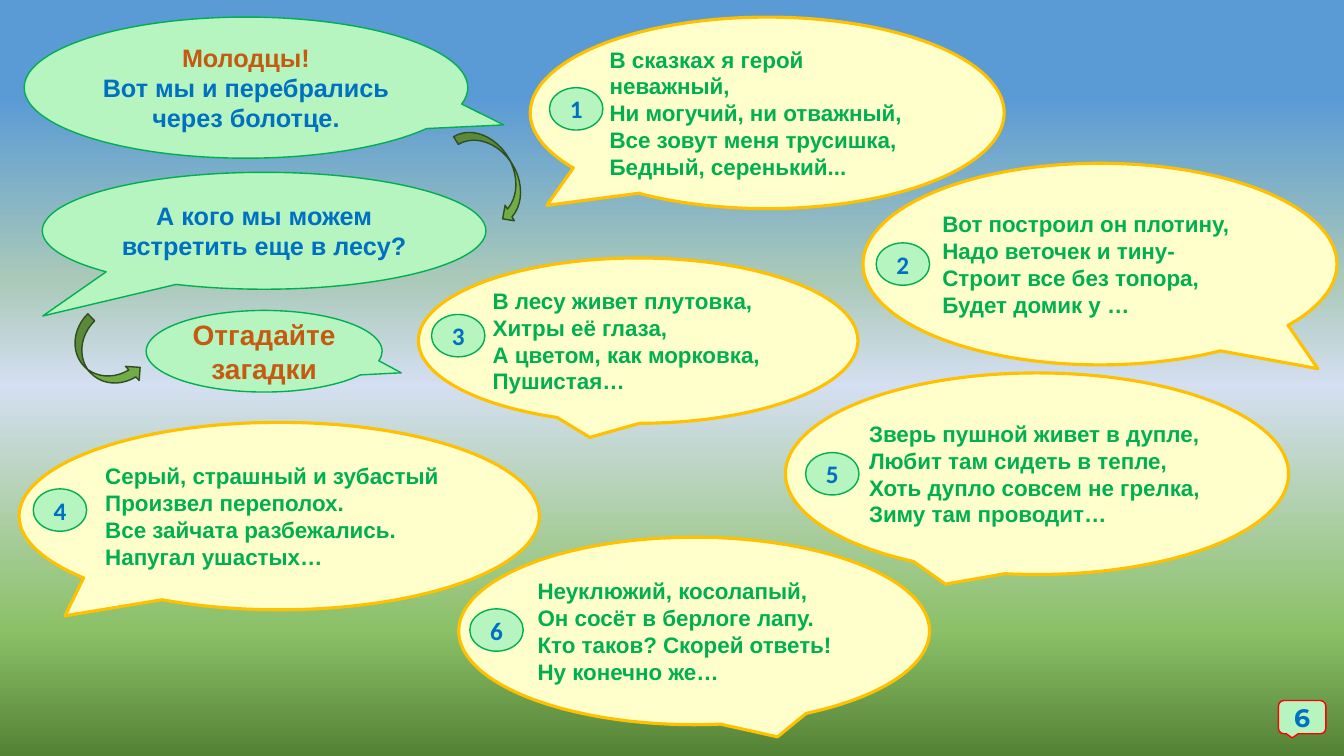
from lxml import etree
from pptx import Presentation
from pptx.dml.color import RGBColor
from pptx.enum import shapes, text
from pptx.oxml.ns import qn
from pptx.util import Inches, Pt

HUES = {
    "mint": "B6F4C0", "green": "00B050", "cream": "FFFFCC", "gold": "FFC000",
    "blue": "0070C0", "rust": "C55A11", "leaf": "70AD47", "moss": "314C1F",
    "red": "FF0000",
}
SKY = [(13, "5B9BD5"), (37, "AAC9B9"), (51, "D4DFF1"), (83, "8CC168"), (100, "548235")]
FORM = shapes.MSO_SHAPE
ALIGN = text.PP_ALIGN

HINTS = [
    ((0.24, 0.17, 4.4, 1.4), (0.581, 0.264), 18,
     [("Молодцы!", "rust"), ("Вот мы и перебрались через болотце.", "blue")]),
    ((0.42, 1.71, 4.4, 1.16), (-0.499, 0.729), 18,
     [("А кого мы можем встретить еще в лесу?", "blue")]),
    ((1.45, 3.08, 2.34, 0.81), (0.581, 0.264), 20,
     [("Отгадайте загадки", "rust")]),
]
RIDDLES = [
    ((5.26, 0.17, 4.7, 1.9), (-0.465, 0.483), (5.45, 0.87),
     ["В сказках я герой неважный,", "Ни могучий, ни отважный,",
      "Все зовут меня трусишка,", "Бедный, серенький..."]),
    ((8.56, 1.62, 4.7, 2), (0.46, 0.519), (8.69, 2.41),
     ["Вот построил он плотину,", "Надо веточек и тину-",
      "Строит все без топора,", "Будет домик у …"]),
    ((4.15, 2.56, 4.36, 1.64), (-0.11, 0.585), (4.28, 3.12),
     ["В лесу живет плутовка,", "Хитры её глаза,",
      "А цветом, как морковка,", "Пушистая…"]),
    ((0.19, 4.19, 5.16, 1.86), (-0.412, 0.532), (0.33, 4.85),
     ["Серый, страшный и зубастый", "Произвел переполох.",
      "Все зайчата разбежались.", "Напугал ушастых…"]),
    ((7.79, 3.7, 4.99, 2), (-0.182, 0.548), (7.99, 4.49),
     ["Зверь пушной живет в дупле,", "Любит там сидеть в тепле,",
      "Хоть дупло совсем не грелка,", "Зиму там проводит…"]),
    ((4.55, 5.33, 4.67, 1.86), (0.177, 0.565), (4.66, 6.04),
     ["Неуклюжий, косолапый,", "Он сосёт в берлоге лапу.",
      "Кто таков? Скорей ответь!", "Ну конечно же…"]),
]


def tint(name):
    return RGBColor.from_string(HUES[name])


def paint_sky(slide):
    fill = slide.background.fill
    fill.gradient()
    fill.gradient_angle = 270
    stops = slide.element.find(".//" + qn("a:gsLst"))
    for stop in list(stops):
        stops.remove(stop)
    for pos, hue in SKY:
        stop = etree.SubElement(stops, qn("a:gs"), pos=str(pos * 1000))
        etree.SubElement(stop, qn("a:srgbClr"), val=hue)


def add_form(slide, form, box, fill, line, width=1, tail=()):
    shape = slide.shapes.add_shape(form, *map(Inches, box))
    shape.shadow.inherit = False
    shape.fill.solid()
    shape.fill.fore_color.rgb = tint(fill)
    shape.line.color.rgb = tint(line)
    shape.line.width = Pt(width)
    for i, shift in enumerate(tail):
        shape.adjustments[i] = shift
    return shape


def write(shape, lines, size, font="Arial", align=ALIGN.CENTER):
    frame = shape.text_frame
    frame.word_wrap = True
    frame.vertical_anchor = text.MSO_ANCHOR.MIDDLE
    frame.text = "\n".join(line for line, _ in lines)
    for para, (_, hue) in zip(frame.paragraphs, lines):
        para.alignment = align
        for run in para.runs:
            run.font.name = font
            run.font.size = Pt(size)
            run.font.bold = True
            run.font.color.rgb = tint(hue)


def add_hint(slide, box, tail, size, lines):
    shape = add_form(slide, FORM.OVAL_CALLOUT, box, "mint", "green", tail=tail)
    write(shape, lines, size)


def add_riddle(slide, box, tail, lines):
    shape = add_form(slide, FORM.OVAL_CALLOUT, box, "cream", "gold", 2.25, tail)
    write(shape, [(line, "green") for line in lines], 16, align=ALIGN.LEFT)


def add_badge(slide, spot, num):
    shape = add_form(slide, FORM.OVAL, (*spot, 0.53, 0.42), "mint", "green")
    write(shape, [(str(num), "blue")], 18, "Calibri")


def add_arrow(slide, box, turn, flip=False):
    shape = add_form(slide, FORM.CURVED_RIGHT_ARROW, box, "leaf", "moss")
    shape.rotation = turn
    if flip:
        shape.element.spPr.find(qn("a:xfrm")).set("flipH", "1")


def add_page(slide, num):
    box = (12.68, 6.95, 0.47, 0.33)
    shape = add_form(slide, FORM.ROUNDED_RECTANGULAR_CALLOUT, box, "mint", "red")
    write(shape, [(str(num), "blue")], 18, "Montserrat")


def main():
    deck = Presentation()
    deck.slide_width = Inches(13.33)
    deck.slide_height = Inches(7.5)
    slide = deck.slides.add_slide(deck.slide_layouts[6])
    paint_sky(slide)
    for hint in HINTS:
        add_hint(slide, *hint)
    add_arrow(slide, (4.74, 1.19, 0.36, 1.04), 329.2, flip=True)
    add_arrow(slide, (0.83, 3.13, 0.39, 0.84), 315.7)
    for box, tail, _, lines in RIDDLES:
        add_riddle(slide, box, tail, lines)
    for num, (_, _, spot, _) in enumerate(RIDDLES, 1):
        add_badge(slide, spot, num)
    add_page(slide, 6)
    deck.save("out.pptx")


if __name__ == "__main__":
    main()
